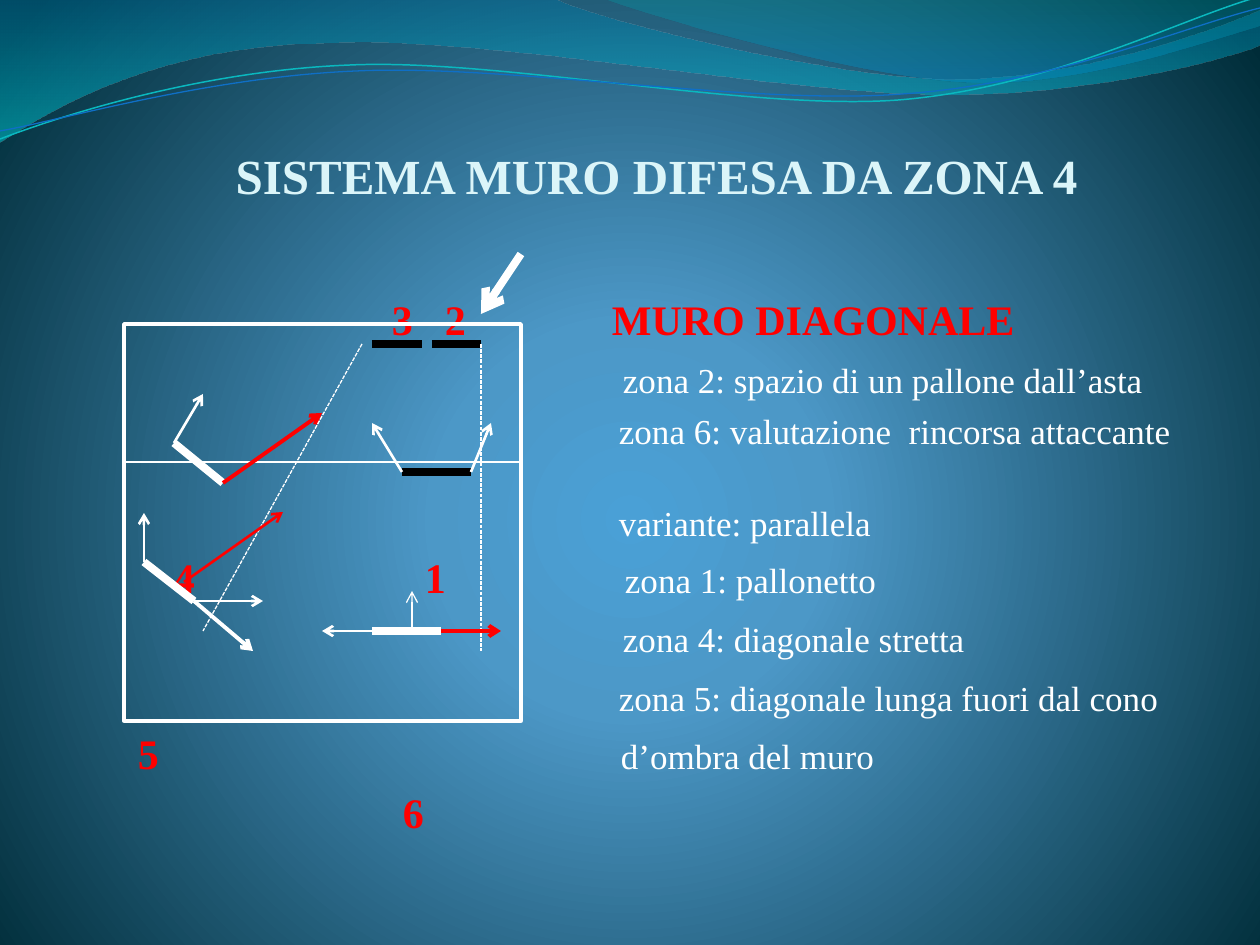
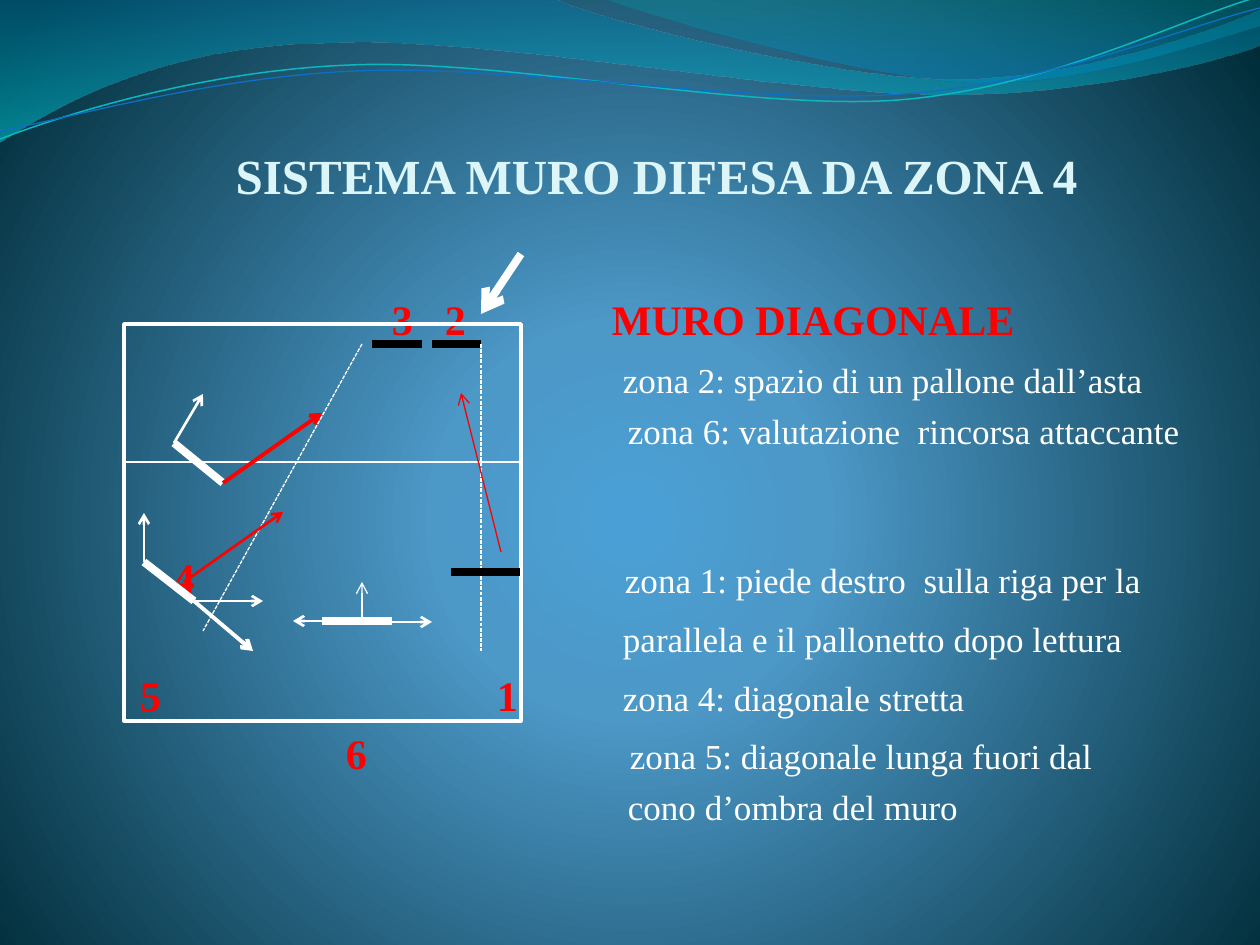
from dataclasses import dataclass

from pptx import Presentation
from pptx.dml.color import RGBColor
from pptx.enum.dml import MSO_LINE
from pptx.enum.shapes import MSO_CONNECTOR, MSO_SHAPE
from pptx.enum.text import MSO_ANCHOR, MSO_AUTO_SIZE, PP_ALIGN
from pptx.oxml import parse_xml
from pptx.oxml.ns import nsdecls, qn
from pptx.oxml.xmlchemy import OxmlElement
from pptx.util import Emu, Pt

EMU_PER_PX = 914400 / 126
SLIDE_WIDTH, SLIDE_HEIGHT = 1260, 945
FONT = "Times New Roman"
ROW_HEIGHT = 49
BODY = (64, 267, 1134, 605)
BODY_INSET = 13
FIRST_ROW_TOP = 295

COLORS = {
    "white": "FFFFFF",
    "black": "000000",
    "red": "FF0000",
    "title": "DBF5F9",
    "glow": "4AA0D6",
    "blue": "4C98C7",
    "night": "002C38",
    "wave blue": "0074A1",
    "wave teal": "00C6CF",
    "crest teal": "00A1A9",
    "crest blue": "008BBF",
    "teal line": "0AB8BF",
    "blue line": "0F6FC6",
}
TITLE_FONT = dict(name=FONT, size=Pt(28), bold=True)
HEADING_FONT = dict(name=FONT, size=Pt(24), bold=True)
NOTE_FONT = dict(name=FONT, size=Pt(20), bold=False)


@dataclass
class Wave:
    """Segments hold two numbers for a straight line, six for a cubic curve."""
    start: tuple[int, int]
    segments: list[tuple[int, ...]]
    stops: tuple[tuple[int, str, int], ...] = ()
    line: str = ""
    width: float = 0


@dataclass
class Stroke:
    x1: int
    y1: int
    x2: int
    y2: int
    color: str = "white"
    width: float = 1.5
    arrow: bool = False
    dashed: bool = False


@dataclass
class Row:
    """One line of text: red labels, then a white note, each with its left edge."""
    bottom: int
    labels: tuple[tuple[str, int], ...] = ()
    note: tuple[str, int] | None = None


@dataclass
class Scheme:
    rows: list[Row]
    strokes: list[Stroke]


TITLE = "SISTEMA MURO DIFESA DA ZONA 4"
WAVES = [
    Wave((0, 0), [(554, -1), (600, 21, 837, 79, 955, 79), (1075, 79, 1207, 33, 1260, 11),
                  (1261, 45), (1239, 55, 1096, 96, 940, 94), (784, 94, 481, 35, 324, 43),
                  (163, 45, 58, 105, -1, 142)],
         stops=((0, "wave blue", 45), (100, "wave teal", 55))),
    Wave((604, -1), [(641, 14, 859, 78, 969, 82), (1079, 87, 1211, 40, 1260, 26), (1260, 0)],
         stops=((0, "crest teal", 30), (80, "crest blue", 45))),
    Wave((0, 139), [(60, 116, 199, 71, 349, 65), (498, 58, 747, 111, 898, 100),
                    (1050, 88, 1182, 18, 1258, -3)], line="teal line", width=0.85),
    Wave((0, 131), [(59, 121, 207, 77, 357, 71), (508, 64, 752, 106, 903, 94),
                    (1053, 84, 1186, 26, 1260, 8)], line="blue line", width=0.75),
]

COURT = (124, 324, 397, 397)
SHARED_ROWS = [
    Row(344, (("3", 392), ("2", 445), ("MURO DIAGONALE", 612))),
    Row(401, note=("zona 2: spazio di un pallone dall’asta", 623)),
]
SHARED_STROKES = [
    Stroke(124, 462, 521, 462),
    Stroke(432, 344, 481, 344, "black", 4.5),
    Stroke(372, 344, 422, 344, "black", 4.5),
    Stroke(174, 443, 203, 394, arrow=True),
    Stroke(174, 443, 223, 483, width=4.5),
    Stroke(144, 562, 144, 513, arrow=True),
    Stroke(194, 601, 263, 601, arrow=True),
    Stroke(194, 601, 253, 651, width=2.25, arrow=True),
    Stroke(223, 483, 322, 413, "red", 2.25, arrow=True),
    Stroke(481, 344, 481, 651, width=0.75, dashed=True),
    Stroke(362, 344, 203, 631, width=0.75, dashed=True),
    Stroke(521, 254, 481, 314, width=4.5, arrow=True),
    Stroke(144, 562, 194, 601, width=4.5),
    Stroke(184, 582, 283, 512, "red", arrow=True),
]

SCHEMES = [
    Scheme(
        [Row(452, note=("zona 6: valutazione  rincorsa attaccante", 619)),
         Row(544, note=("variante: parallela", 619)),
         Row(602, (("4", 174), ("1", 425)), ("zona 1: pallonetto", 625)),
         Row(660, note=("zona 4: diagonale stretta", 623)),
         Row(719, note=("zona 5: diagonale lunga fuori dal cono", 619)),
         Row(778, (("5", 138),), ("d’ombra del muro", 621)),
         Row(837, (("6", 403),))],
        [Stroke(402, 472, 471, 472, "black", 4.5),
         Stroke(402, 472, 372, 423, arrow=True),
         Stroke(471, 472, 491, 423, arrow=True),
         Stroke(372, 631, 441, 631, width=4.5),
         Stroke(441, 631, 501, 631, "red", 2.25, arrow=True),
         Stroke(412, 631, 412, 591, width=0.75, arrow=True),
         Stroke(372, 631, 322, 631, arrow=True)],
    ),
    Scheme(
        [Row(452, note=("zona 6: valutazione  rincorsa attaccante", 628)),
         Row(602, (("4", 174),), ("zona 1: piede destro  sulla riga per la", 625)),
         Row(660, note=("parallela e il pallonetto dopo lettura", 623)),
         Row(720, (("5", 140), ("1", 497)), ("zona 4: diagonale stretta", 623)),
         Row(778, (("6", 346),), ("zona 5: diagonale lunga fuori dal", 630)),
         Row(828, note=("cono d’ombra del muro", 628))],
        [Stroke(451, 572, 520, 572, "black", 4.5),
         Stroke(322, 621, 392, 621, width=4.5),
         Stroke(362, 621, 362, 582, width=0.75, arrow=True),
         Stroke(342, 621, 293, 621, arrow=True),
         Stroke(362, 622, 432, 622, arrow=True),
         Stroke(501, 552, 461, 393, "red", 0.75, arrow=True)],
    ),
]


def px(length: float) -> Emu:
    return Emu(round(length * EMU_PER_PX))


def rgb(name: str) -> RGBColor:
    return RGBColor.from_string(COLORS[name])


def set_format(target, values: dict) -> None:
    for attribute, value in values.items():
        setattr(target, attribute, value)


def add_run(paragraph, text: str, font: dict, color: str) -> None:
    run = paragraph.add_run()
    run.text = text
    set_format(run.font, font)
    run.font.color.rgb = rgb(color)


def set_gradient(properties, stops, direction: str) -> None:
    """Swap the solid fill of a properties element for a gradient."""
    stop_list = "".join(
        f'<a:gs pos="{place * 1000}"><a:srgbClr val="{COLORS[color]}">'
        f'<a:alpha val="{opacity * 1000}"/></a:srgbClr></a:gs>'
        for place, color, opacity in stops)
    gradient = parse_xml(f'<a:gradFill {nsdecls("a")} rotWithShape="1">'
                         f"<a:gsLst>{stop_list}</a:gsLst>{direction}</a:gradFill>")
    properties.replace(properties.find(qn("a:solidFill")), gradient)


def bend_curves(shape, segments: list[tuple[int, ...]]) -> None:
    """Join the three line steps of each cubic segment into one curve."""
    steps = iter(list(shape.element.iter(qn("a:lnTo"))))
    for segment in segments:
        corners = [next(steps) for _ in range(len(segment) // 2)]
        if len(corners) == 3:
            curve = OxmlElement("a:cubicBezTo")
            corners[0].addprevious(curve)
            for corner in corners:
                curve.append(corner[0])
                corner.getparent().remove(corner)


def add_wave(slide, wave: Wave):
    points = [segment[i:i + 2] for segment in wave.segments for i in range(0, len(segment), 2)]
    builder = slide.shapes.build_freeform(*wave.start, scale=EMU_PER_PX)
    builder.add_line_segments(points, close=False)
    if wave.stops:
        builder.add_line_segments([wave.start], close=True)
    shape = builder.convert_to_shape()
    bend_curves(shape, wave.segments)
    shape.shadow.inherit = False
    if wave.stops:
        shape.fill.solid()
        set_gradient(shape.element.spPr, wave.stops, '<a:lin ang="5400000" scaled="0"/>')
        shape.line.fill.background()
    else:
        shape.fill.background()
        shape.line.color.rgb = rgb(wave.line)
        shape.line.width = Pt(wave.width)
    return shape


def decorate_layout(layout, slide) -> None:
    """Give the layout its background and waves, drawn on a slide and moved over."""
    layout.background.fill.solid()
    set_gradient(layout.element.find(".//" + qn("p:bgPr")),
                 ((0, "glow", 100), (25, "blue", 100), (100, "night", 100)),
                 '<a:path path="circle"><a:fillToRect l="10000" t="110000" r="10000" b="100000"/></a:path>')
    for number, wave in enumerate(WAVES, start=101):
        element = add_wave(slide, wave).element
        element.nvSpPr.cNvPr.set("id", str(number))
        layout.shapes.element.append(element)


def add_title(slide) -> None:
    title = slide.shapes.title
    set_format(title, dict(left=px(114), top=px(95), width=px(1085), height=px(109)))
    frame = title.text_frame
    set_format(frame, dict(margin_left=0, margin_top=px(6), margin_right=0, margin_bottom=0,
                           word_wrap=True, auto_size=MSO_AUTO_SIZE.NONE,
                           vertical_anchor=MSO_ANCHOR.BOTTOM))
    frame.paragraphs[0].alignment = PP_ALIGN.CENTER
    add_run(frame.paragraphs[0], TITLE, TITLE_FONT, "title")


def set_tab_stops(paragraph, lefts: list[int]) -> None:
    tab_list = OxmlElement("a:tabLst")
    for left in lefts:
        tab = OxmlElement("a:tab")
        tab.set("pos", str(px(left - BODY[0] - BODY_INSET)))
        tab.set("algn", "l")
        tab_list.append(tab)
    paragraph._p.get_or_add_pPr().append(tab_list)


def add_rows(slide, rows: list[Row]) -> None:
    """Write zone numbers and notes, spaced by the bottoms of their rows."""
    frame = slide.shapes.add_textbox(*map(px, BODY)).text_frame
    set_format(frame, dict(word_wrap=True, margin_left=px(BODY_INSET), margin_right=px(BODY_INSET),
                           margin_top=px(FIRST_ROW_TOP - BODY[1])))
    previous_bottom = FIRST_ROW_TOP
    for index, row in enumerate(rows):
        paragraph = frame.add_paragraph() if index else frame.paragraphs[0]
        set_format(paragraph, dict(line_spacing=Pt(28),
                                   space_before=px(row.bottom - previous_bottom - ROW_HEIGHT)))
        notes = (row.note,) if row.note else ()
        set_tab_stops(paragraph, [left for _, left in row.labels + notes])
        for items, font, color in ((row.labels, HEADING_FONT, "red"), (notes, NOTE_FONT, "white")):
            if items:
                add_run(paragraph, "".join(f"\t{text}" for text, _ in items), font, color)
        previous_bottom = row.bottom


def add_stroke(slide, stroke: Stroke) -> None:
    connector = slide.shapes.add_connector(
        MSO_CONNECTOR.STRAIGHT, px(stroke.x1), px(stroke.y1), px(stroke.x2), px(stroke.y2))
    connector.line.color.rgb = rgb(stroke.color)
    connector.line.width = Pt(stroke.width)
    if stroke.dashed:
        connector.line.dash_style = MSO_LINE.SQUARE_DOT
    if stroke.arrow:
        arrowhead = OxmlElement("a:tailEnd")
        arrowhead.set("type", "arrow")
        connector.line._get_or_add_ln().append(arrowhead)
    connector.element.spPr.append(OxmlElement("a:effectLst"))


def add_court(slide) -> None:
    court = slide.shapes.add_shape(MSO_SHAPE.RECTANGLE, *map(px, COURT))
    court.shadow.inherit = False
    court.fill.background()
    court.line.color.rgb = rgb("white")
    court.line.width = Pt(2)


def add_scheme(slide, scheme: Scheme) -> None:
    add_title(slide)
    add_rows(slide, SHARED_ROWS + scheme.rows)
    for stroke in SHARED_STROKES:
        add_stroke(slide, stroke)
    add_court(slide)
    for stroke in scheme.strokes:
        add_stroke(slide, stroke)


def main() -> None:
    presentation = Presentation()
    set_format(presentation, dict(slide_width=px(SLIDE_WIDTH), slide_height=px(SLIDE_HEIGHT)))
    layout = presentation.slide_layouts.get_by_name("Title Only")
    slides = [presentation.slides.add_slide(layout) for _ in SCHEMES]
    decorate_layout(layout, slides[0])
    for slide, scheme in zip(slides, SCHEMES):
        add_scheme(slide, scheme)
    presentation.save("out.pptx")


if __name__ == "__main__":
    main()
